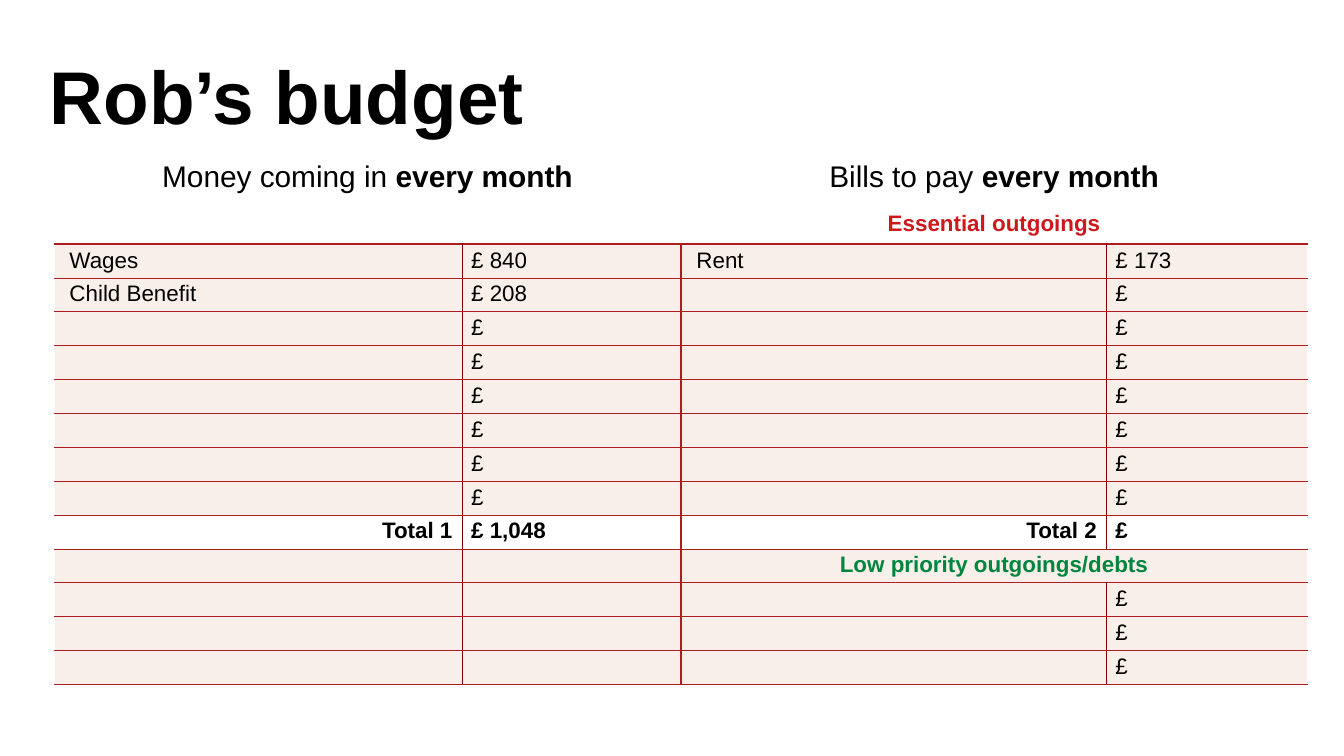
from dataclasses import dataclass

from lxml.etree import SubElement
from pptx import Presentation
from pptx.dml.color import RGBColor as RGB
from pptx.enum.text import MSO_ANCHOR as ANCHOR, PP_ALIGN as ALIGN
from pptx.oxml.ns import qn
from pptx.util import Pt


@dataclass(frozen=True)
class Theme:
    font: str = "Arial"
    text: str = "000000"
    white: str = "FFFFFF"
    tint: str = "F9EFEA"
    rule: str = "AB1D1F"
    divider: str = "800000"
    essential: str = "CC191D"
    low_priority: str = "00853F"
    title_size: int = 40
    head_size: int = 16
    body_size: int = 12
    thin: float = 0.25
    thick: float = 0.75


class Deck:
    def __init__(self, prs, theme):
        self.theme = theme
        self.s = prs.slides.add_slide(prs.slide_layouts[5])

    def run(self, p, text, size, color=None, bold=False):
        r = p.add_run()
        r.text = text
        r.font.name = self.theme.font
        r.font.size = Pt(size)
        r.font.bold = bold
        r.font.color.rgb = RGB.from_string(color or self.theme.text)

    def title(self, text, left, top, width, height):
        sp = self.s.shapes.title
        sp.left, sp.top, sp.width, sp.height = map(Pt, (left, top, width, height))
        tf = sp.text_frame
        tf.word_wrap = True
        tf.vertical_anchor = ANCHOR.TOP
        p = tf.paragraphs[0]
        p.alignment = ALIGN.LEFT
        p.line_spacing = Pt(54)
        self.run(p, text, self.theme.title_size, bold=True)

    def table(self, left, top, cols, rows):
        frame = self.s.shapes.add_table(len(rows), len(cols), Pt(left), Pt(top),
                                        Pt(sum(cols)), Pt(sum(rows)))
        tbl = frame.table
        tbl.first_row = tbl.horz_banding = False
        for col, width in zip(tbl.columns, cols):
            col.width = Pt(width)
        for row, height in zip(tbl.rows, rows):
            row.height = Pt(height)
        return tbl

    def border(self, cell, side, color, width):
        tc_pr = cell._tc.get_or_add_tcPr()
        ln = SubElement(tc_pr, qn(f"a:ln{side}"), w=str(int(Pt(width))))
        SubElement(SubElement(ln, qn("a:solidFill")), qn("a:srgbClr"), val=color)

    def cell(self, cell, runs, size, fill, align, borders):
        for side, (color, width) in borders.items():
            self.border(cell, side, color, width)
        cell.fill.solid()
        cell.fill.fore_color.rgb = RGB.from_string(fill)
        cell.margin_left = cell.margin_right = Pt(5)
        cell.margin_top = cell.margin_bottom = 0
        cell.vertical_anchor = ANCHOR.TOP
        p = cell.text_frame.paragraphs[0]
        p.alignment = align
        p.line_spacing = 1.15
        for text, color, bold in runs:
            self.run(p, text, size, color, bold)
        if not runs:  # keeps blank rows at body height
            SubElement(p._p, qn("a:endParaRPr"), sz=str(size * 100))


def main():
    th = Theme()
    prs = Presentation()
    prs.slide_width, prs.slide_height = Pt(720), Pt(405)
    deck = Deck(prs, th)
    deck.title("Rob’s budget", 19.5, 17.3, 516, 58.3)

    # Budget rows: income, amount, bill, amount
    blank = ("", "£", "", "£")
    budget = [
        (" Wages", "£ 840", " Rent", "£ 173"),
        (" Child Benefit", "£ 208", "", "£"),
        *[blank] * 6,
        ("Total 1", "£ 1,048", "Total 2", "£"),
        ("", "", "Low priority outgoings/debts", ""),
        *[("", "", "", "£")] * 3,
    ]
    headings = [
        [("Money coming in ", None, False), ("every month", None, True)], [],
        [("Bills to pay ", None, False), ("every month", None, True)], [],
    ]
    essentials = [[], [], [("Essential outgoings", th.essential, True)], []]
    total_row, low_row = 10, 11
    grid = [headings, essentials]
    for i, row in enumerate(budget, 2):
        color = th.low_priority if i == low_row else None
        bold = i in (total_row, low_row)
        grid.append([[(text, color, bold)] if text else [] for text in row])

    # Table and merged headings
    heights = [27.4, 19.8] + [18.15] * len(budget)
    tbl = deck.table(28.9, 83.5, [218.5, 117.4, 227.8, 107.8], heights)
    merged = {(0, 0), (0, 2), (1, 2), (low_row, 2)}
    for i, j in merged:
        tbl.cell(i, j).merge(tbl.cell(i, j + 1))

    # Ruling: one line for each horizontal and vertical edge
    across = [(th.white, th.thin), (th.white, th.thick), (th.rule, th.thick)]
    across += [(th.rule, th.thin)] * len(budget)
    down = [(th.white, th.thin), (th.divider, th.thin), (th.rule, th.thick),
            (th.divider, th.thin), (th.white, th.thin)]
    head_down = [(th.white, th.thin)] * len(down)

    # Cells
    for i, row in enumerate(grid):
        edges = head_down if i < 2 else down
        for j, runs in enumerate(row):
            spans, covered = (i, j) in merged, (i, j - 1) in merged
            borders = {} if covered else {"L": edges[j]}
            borders |= {"R": edges[j + 2 if spans else j + 1],
                        "T": across[i], "B": across[i + 1]}
            align = ALIGN.LEFT
            if spans:
                align = ALIGN.CENTER
            elif i == total_row and j % 2 == 0:
                align = ALIGN.RIGHT
            fill = th.white if i < 2 or i == total_row else th.tint
            size = th.head_size if i == 0 else th.body_size
            deck.cell(tbl.cell(i, j), runs, size, fill, align, borders)

    prs.save("out.pptx")


if __name__ == "__main__":
    main()
